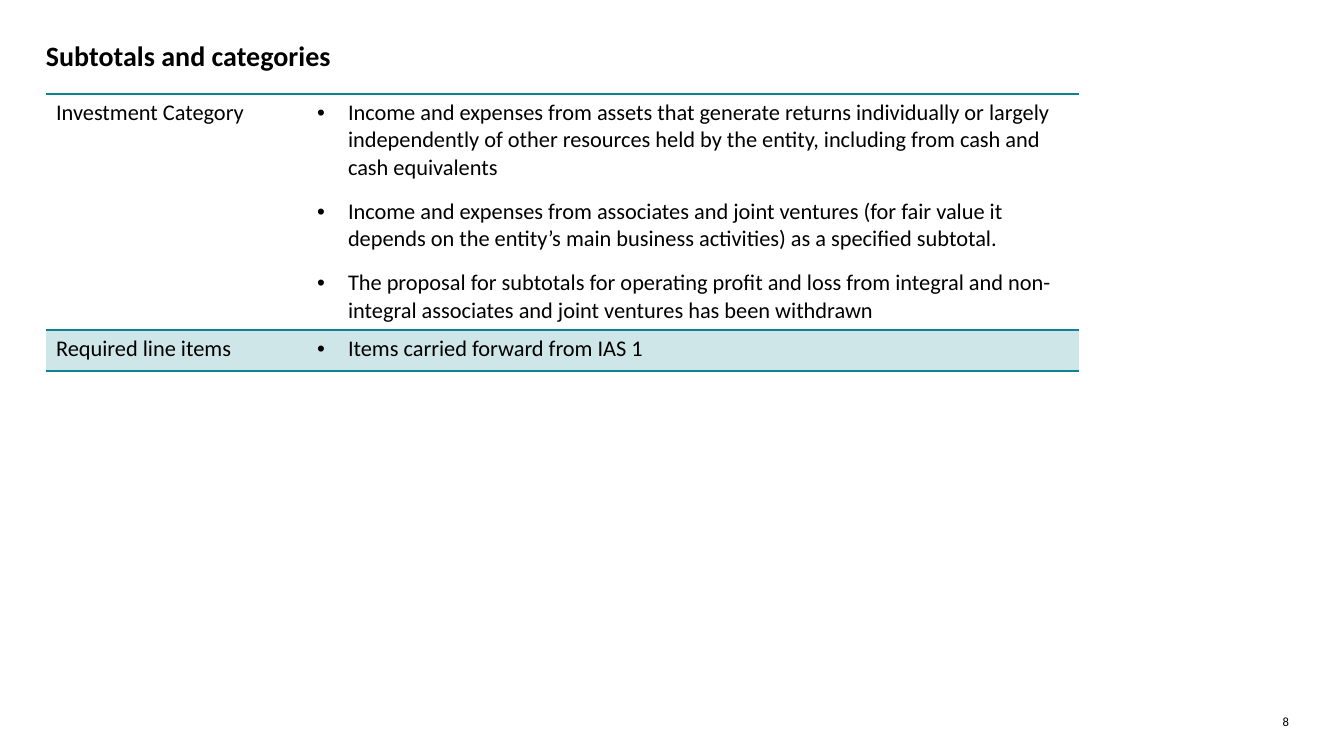
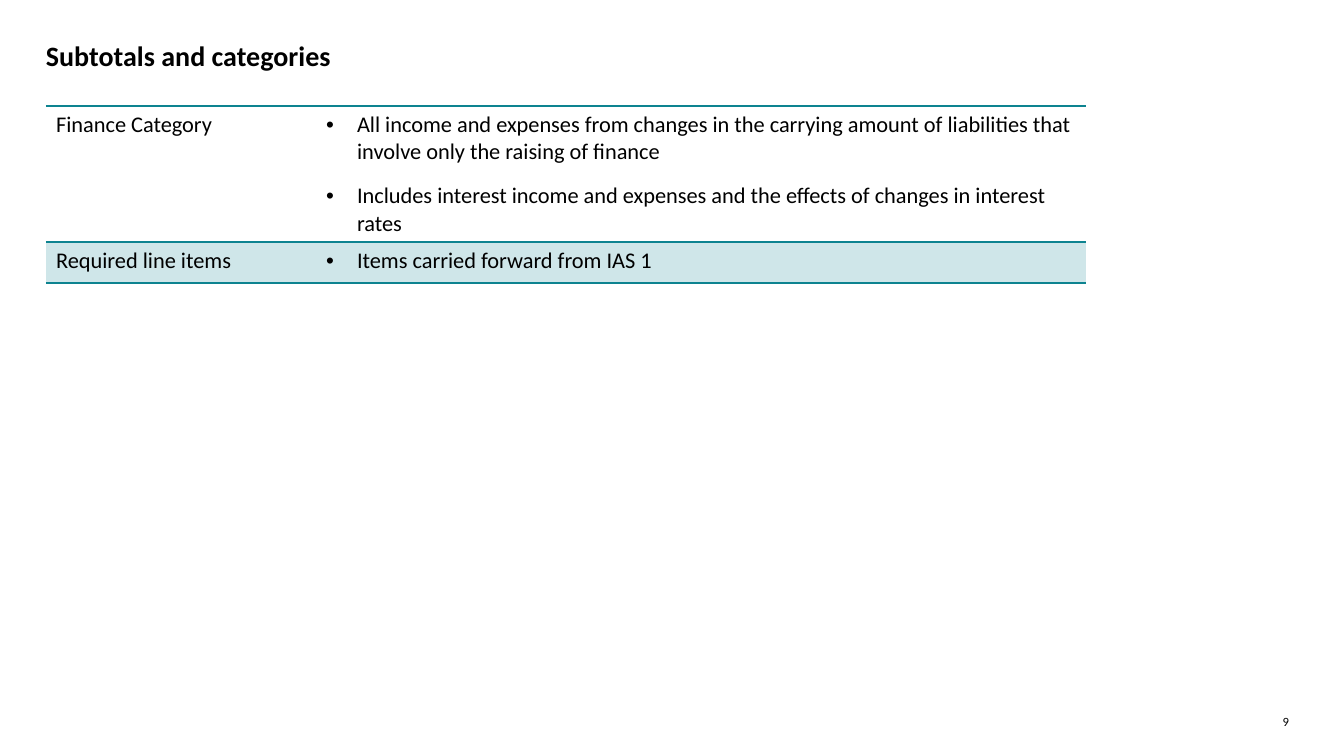
import pptx
import pptx.dml.color
import pptx.enum.text
import pptx.oxml.ns
import pptx.util
from lxml import etree

BLACK = pptx.dml.color.RGBColor(0x00, 0x00, 0x00)
TEAL = pptx.dml.color.RGBColor(0x0D, 0x83, 0x90)
PALE_TEAL = pptx.dml.color.RGBColor(0xCF, 0xE6, 0xE9)
FONT = "Calibri"
EMU_PER_PX = 914400 / 100.8
LEFT = 46
INDENT = 31
RULE_PT = 1

REQUIRED = ("Required line items", ["Items carried forward from IAS 1"])
SLIDES = [
    (8, (LEFT, 94), [261, 772], [236, 41], [
        ("Investment Category", [
            "Income and expenses from assets that generate returns individually or largely "
            "independently of other resources held by the entity, including from cash and "
            "cash equivalents",
            "Income and expenses from associates and joint ventures (for fair value it "
            "depends on the entity’s main business activities) as a specified subtotal.",
            "The proposal for subtotals for operating profit and loss from integral and "
            "non-integral associates and joint ventures has been withdrawn",
        ]),
        REQUIRED,
    ]),
    (9, (LEFT, 106), [270, 770], [136, 41], [
        ("Finance Category", [
            "All income and expenses from changes in the carrying amount of liabilities that "
            "involve only the raising of finance",
            "Includes interest income and expenses and the effects of changes in interest rates",
        ]),
        REQUIRED,
    ]),
]


def px(n):
    """Turn pixels into EMU."""
    return pptx.util.Emu(round(n * EMU_PER_PX))


def sub(parent, tag, **attrs):
    """Append a DrawingML element."""
    return etree.SubElement(parent, pptx.oxml.ns.qn(tag), attrs)


def style(p, size, bold=False):
    """Set the font of a paragraph."""
    p.font.name = FONT
    p.font.size = pptx.util.Pt(size)
    p.font.bold = bold
    p.font.color.rgb = BLACK


def add_text(slide, box, text, size, bold=False, align=pptx.enum.text.PP_ALIGN.LEFT):
    """Add a text box without insets."""
    tf = slide.shapes.add_textbox(*map(px, box)).text_frame
    tf.margin_left = tf.margin_top = tf.margin_right = tf.margin_bottom = 0
    tf.word_wrap = True
    p = tf.paragraphs[0]
    p.text = text
    p.alignment = align
    style(p, size, bold)


def set_borders(cell):
    """Rule a cell above and below, with open sides."""
    tcPr = cell._tc.get_or_add_tcPr()
    for side in ("L", "R"):
        sub(sub(tcPr, f"a:ln{side}", w="0"), "a:noFill")
    for side in ("T", "B"):
        ln = sub(tcPr, f"a:ln{side}", w=str(pptx.util.Pt(RULE_PT)))
        sub(sub(ln, "a:solidFill"), "a:srgbClr", val=str(TEAL))


def fill_cell(cell, texts, bulleted, shaded):
    """Write the paragraphs of a cell and set its look."""
    set_borders(cell)
    if shaded:
        cell.fill.solid()
        cell.fill.fore_color.rgb = PALE_TEAL
    else:
        cell.fill.background()
    tf = cell.text_frame
    for i, text in enumerate(texts):
        p = tf.add_paragraph() if i else tf.paragraphs[0]
        p.text = text
        if i:
            p.space_before = pptx.util.Pt(12)
        if bulleted:
            pPr = p._p.get_or_add_pPr()
            pPr.set("marL", str(px(INDENT)))
            pPr.set("indent", str(-px(INDENT)))
            sub(pPr, "a:buFont", typeface="Arial")
            sub(pPr, "a:buChar", char="•")
        style(p, 16)


def add_category_table(slide, origin, widths, heights, rows):
    """Add a ruled table of labels and bullets, with the last row shaded."""
    box = (*origin, sum(widths), sum(heights))
    table = slide.shapes.add_table(len(rows), len(widths), *map(px, box)).table
    table.first_row = table.horz_banding = False
    for column, width in zip(table.columns, widths):
        column.width = px(width)
    for i, (height, (label, bullets)) in enumerate(zip(heights, rows)):
        table.rows[i].height = px(height)
        shaded = i == len(rows) - 1
        fill_cell(table.cell(i, 0), [label], False, shaded)
        fill_cell(table.cell(i, 1), bullets, True, shaded)


def add_category_slide(prs, number, origin, widths, heights, rows):
    """Add a slide with its title, table and page number."""
    slide = prs.slides.add_slide(prs.slide_layouts[6])
    add_text(slide, (LEFT, 39, 1231, 40), "Subtotals and categories", 20, bold=True)
    add_category_table(slide, origin, widths, heights, rows)
    add_text(slide, (1255, 714, 34, 15), str(number), 9,
             align=pptx.enum.text.PP_ALIGN.RIGHT)


def main():
    """Build and save the presentation."""
    prs = pptx.Presentation()
    prs.slide_width, prs.slide_height = px(1344), px(756)
    for content in SLIDES:
        add_category_slide(prs, *content)
    prs.save("out.pptx")


if __name__ == "__main__":
    main()
